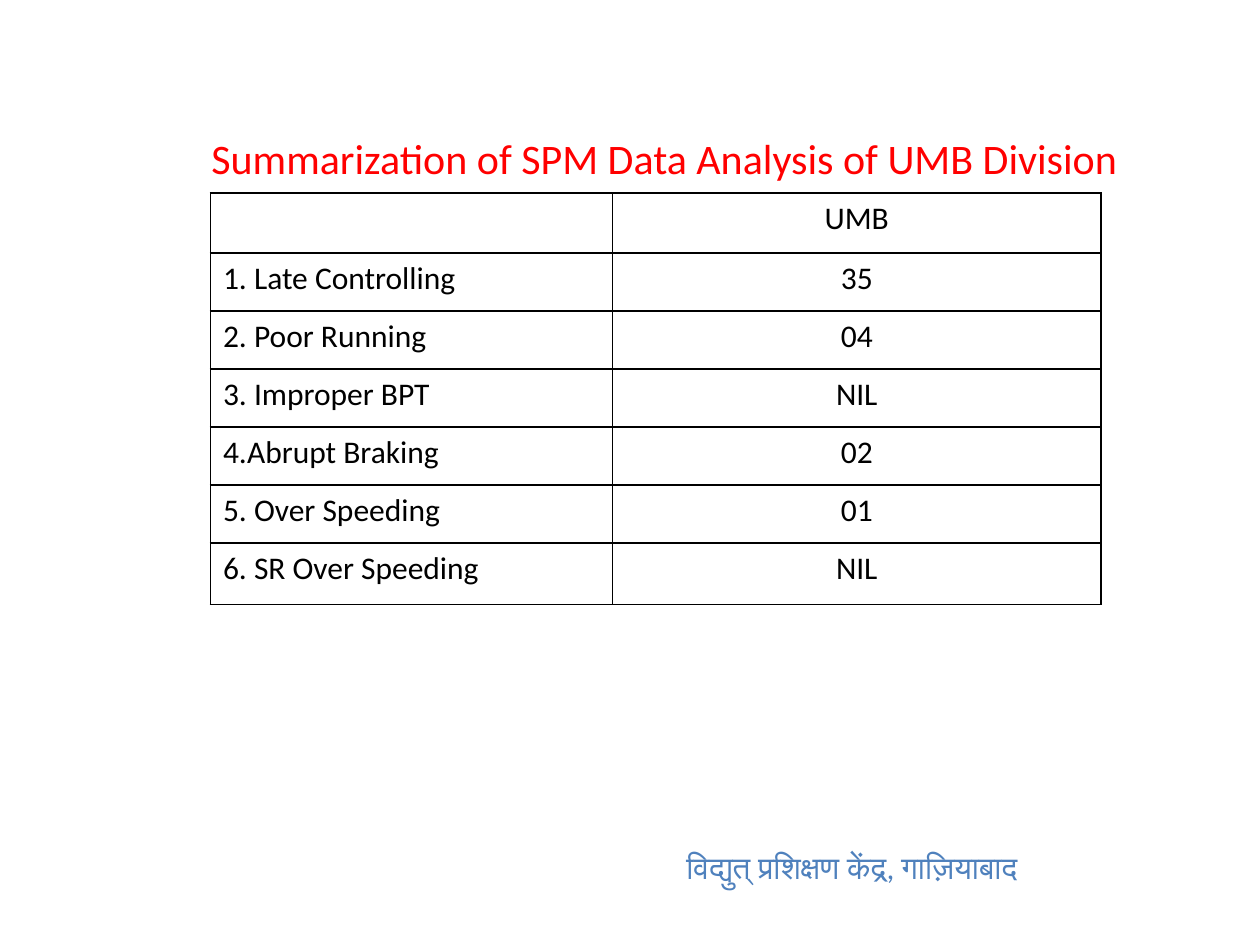
"""Build a slide with a red heading, a two-column result table and a footer."""
from dataclasses import dataclass

from lxml.etree import SubElement as Sub
from pptx import Presentation
from pptx.dml.color import RGBColor as Rgb
from pptx.enum.text import MSO_AUTO_SIZE as Fit, PP_ALIGN as Align
from pptx.oxml.ns import qn
from pptx.slide import Slide
from pptx.table import _Cell as Cell
from pptx.text.text import TextFrame as Frame
from pptx.util import Inches, Pt

WIDE, HIGH = Inches(10), Inches(7.5)


@dataclass(frozen=True)
class Theme:
    font: str = "Calibri"
    ink: str = "000000"
    red: str = "FF0000"
    blue: str = "4F81BD"
    body: int = 18
    head: int = 24
    rule: float = 1


@dataclass(frozen=True)
class Box:
    """Place on the slide, in percent of its width and height."""
    left: float
    top: float
    width: float
    height: float

    def place(self) -> tuple[int, int, int, int]:
        return (int(WIDE * self.left / 100), int(HIGH * self.top / 100),
                int(WIDE * self.width / 100), int(HIGH * self.height / 100))


@dataclass(frozen=True)
class Label:
    text: str
    box: Box
    size: int
    color: str
    wrap: bool


@dataclass(frozen=True)
class Row:
    name: str
    value: str
    height: float = 0.46


THEME = Theme()
COLS = (3.19, 3.88)
GRID = Box(16.7, 20.4, 70.7, 43.5)
ROWS = (
    Row("", "UMB", 0.48),
    Row("1. Late Controlling", "35"),
    Row("2. Poor Running", "04"),
    Row("3. Improper BPT", "NIL"),
    Row("4.Abrupt Braking", "02"),
    Row("5. Over Speeding", "01"),
    Row("6. SR Over Speeding", "NIL", 0.49),
)
LABELS = (
    Label("विद्युत् प्रशिक्षण केंद्र, गाज़ियाबाद", Box(53.5, 89.07, 34, 5.33),
          THEME.body, THEME.blue, False),
    Label("Summarization of SPM Data Analysis of UMB Division",
          Box(15.8, 13.33, 78.3, 6.67), THEME.head, THEME.red, True),
)


def write(frame: Frame, text: str, *, size: int = THEME.body,
          color: str = THEME.ink, align: Align = Align.LEFT) -> None:
    """Put one formatted line of text in a frame."""
    para = frame.paragraphs[0]
    para.alignment = align
    para.font.size = Pt(size)
    if text:
        run = para.add_run()
        run.text = text
        run.font.name = THEME.font
        run.font.size = Pt(size)
        run.font.color.rgb = Rgb.from_string(color)


def frame_cell(cell: Cell) -> None:
    """Rule all four sides of a cell and clear its fill."""
    props = cell._tc.get_or_add_tcPr()
    for side in "LRTB":
        line = Sub(props, qn(f"a:ln{side}"), w=str(Pt(THEME.rule)))
        fill = Sub(line, qn("a:solidFill"))
        Sub(fill, qn("a:srgbClr"), val=THEME.ink)
    cell.fill.background()


def draw_table(slide: Slide) -> None:
    """Draw the table of results."""
    table = slide.shapes.add_table(len(ROWS), len(COLS), *GRID.place()).table
    for col, width in zip(table.columns, COLS):
        col.width = Inches(width)
    for line, row in zip(table.rows, ROWS):
        line.height = Inches(row.height)
        pairs = ((row.name, Align.LEFT), (row.value, Align.CENTER))
        for cell, (text, align) in zip(line.cells, pairs):
            frame_cell(cell)
            write(cell.text_frame, text, align=align)


def draw_label(slide: Slide, label: Label) -> None:
    """Draw a line of text in a box that fits it."""
    frame = slide.shapes.add_textbox(*label.box.place()).text_frame
    frame.word_wrap = label.wrap
    frame.auto_size = Fit.SHAPE_TO_FIT_TEXT
    write(frame, label.text, size=label.size, color=label.color)


def main() -> None:
    """Build and save the slide."""
    deck = Presentation()
    deck.slide_width, deck.slide_height = WIDE, HIGH
    slide = deck.slides.add_slide(deck.slide_layouts[6])
    draw_table(slide)
    for label in LABELS:
        draw_label(slide, label)
    deck.save("out.pptx")


if __name__ == "__main__":
    main()
